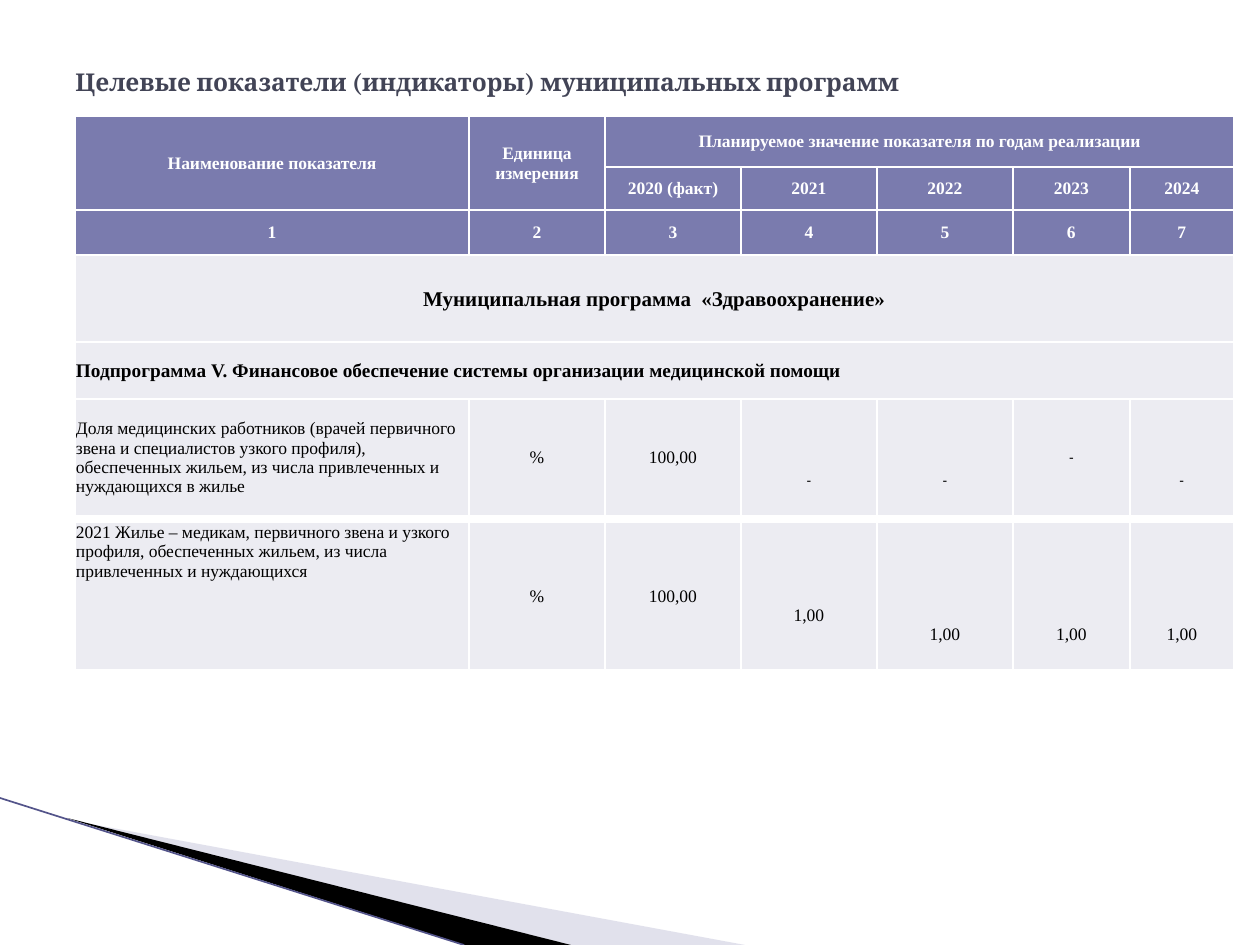
import pptx
import pptx.util
import pptx.dml.color
import pptx.enum.text
import pptx.oxml
import pptx.oxml.ns
import lxml.etree

PX = 914400 / 126
COLS = [394, 136, 136, 136, 136, 117, 104]
HEAD, BODY = "7A7BAE", "ECECF2"
SERIF = "Times New Roman"
MID = pptx.enum.text.MSO_ANCHOR.MIDDLE
TOP = pptx.enum.text.MSO_ANCHOR.TOP
MAIN = [
    [("Наименование показателя", 1, 2), ("Единица измерения", 1, 2),
     ("Планируемое значение показателя по годам реализации", 5, 1)],
    [None, None, "2020 (факт)", "2021", "2022", "2023", "2024"],
    list("1234567"),
    [("Муниципальная программа  «Здравоохранение»", 7, 1)],
    [("Подпрограмма V. Финансовое обеспечение системы организации "
      "медицинской помощи", 7, 1)],
    ["Доля медицинских работников (врачей первичного звена и специалистов "
     "узкого профиля), обеспеченных жильем, из числа привлеченных и "
     "нуждающихся в жилье", "%", "100,00", "-", "-", "-", "-"],
]
LAST = [["2021 Жилье – медикам, первичного звена и узкого профиля, "
         "обеспеченных жильем, из числа привлеченных и нуждающихся",
         "%", "100,00", "1,00", "1,00", "1,00", "1,00"]]


def emu(px):
    """Turn px into EMU."""
    return pptx.util.Emu(round(px * PX))


def paint(color, code):
    """Set a colour from a hex string."""
    color.rgb = pptx.dml.color.RGBColor.from_string(code)


def fill(part, code):
    """Give a cell or shape a solid fill."""
    part.fill.solid()
    paint(part.fill.fore_color, code)


def write(frame, text, size, code, font=SERIF, bold=False, mid=True):
    """Add one run to the first paragraph of a frame."""
    para = frame.paragraphs[0]
    kinds = pptx.enum.text.PP_ALIGN
    para.alignment = kinds.CENTER if mid else kinds.LEFT
    run = para.add_run()
    run.text = text
    run.font.name = font
    run.font.size = pptx.util.Pt(size)
    run.font.bold = bold
    paint(run.font.color, code)


def edge(cell):
    """Draw white one-point borders round a cell."""
    props = cell._tc.get_or_add_tcPr()
    for side in "LRTB":
        props.append(pptx.oxml.parse_xml(
            f'<a:ln{side} {pptx.oxml.ns.nsdecls("a")} w="12700"><a:solidFill>'
            f'<a:srgbClr val="FFFFFF"/></a:solidFill></a:ln{side}>'))


def grid(slide, left, top, rows, data, style):
    """Build a table whose cells follow the style rule."""
    table = slide.shapes.add_table(
        len(rows), len(COLS), emu(left), emu(top),
        emu(sum(COLS)), emu(sum(rows))).table
    for col, width in zip(table.columns, COLS):
        col.width = emu(width)
    for r, high in enumerate(rows):
        table.rows[r].height = emu(high)
        for c in range(len(COLS)):
            cell = table.cell(r, c)
            edge(cell)
            fill(cell, style(r, c)["back"])
    for r, line in enumerate(data):
        for c, item in enumerate(line):
            if item is None:
                continue
            text, wide, tall = item if isinstance(item, tuple) else (item, 1, 1)
            cell, look = table.cell(r, c), style(r, c)
            if wide * tall > 1:
                cell.merge(table.cell(r + tall - 1, c + wide - 1))
            cell.margin_left = cell.margin_right = emu(1)
            cell.margin_top = emu(look.get("drop", 1))
            cell.margin_bottom = 0
            cell.vertical_anchor = look.get("anchor", MID)
            write(cell.text_frame, text, look.get("size", 10),
                  look.get("ink", "000000"), look.get("font", SERIF),
                  look.get("bold", False), look.get("mid", True))


def upper(r, c):
    """Return the look of a cell in the main table."""
    if r < 3:
        return dict(back=HEAD, ink="FFFFFF", bold=True)
    if r < 5:
        return dict(back=BODY, bold=True, size=15 - r, mid=r == 3)
    look = dict(back=BODY, mid=c > 0)
    if c > 2:
        look.update(size=8, font="Arial", drop=1 if c == 5 else 47)
    return look


def lower(r, c):
    """Return the look of a cell in the last table."""
    return dict(back=BODY, mid=c > 0, anchor=MID if c else TOP,
                drop={0: 1, 1: 1, 2: 1, 3: 39}.get(c, 78))


def wedge(slide, left, top, points, code, alpha=100):
    """Draw a filled outline from points relative to a corner."""
    start, *rest = [(left + x, top + y) for x, y in points]
    pen = slide.shapes.build_freeform(*start, scale=PX)
    pen.add_line_segments(rest)
    shape = pen.convert_to_shape()
    shape.shadow.inherit = False
    shape.line.fill.background()
    fill(shape, code)
    if alpha < 100:
        tone = shape.fill._xPr.find(".//" + pptx.oxml.ns.qn("a:srgbClr"))
        lxml.etree.SubElement(
            tone, pptx.oxml.ns.qn("a:alpha"), val=str(alpha * 1000))


def corner(slide, left, top):
    """Draw the wedges and the line at the lower left."""
    wedge(slide, left, top, [(69, 22), (745, 147), (571, 147)], "B6B6D1", 40)
    wedge(slide, left, top, [(67, 20), (571, 147), (465, 147)], "000000")
    line = slide.shapes.add_connector(
        pptx.enum.shapes.MSO_CONNECTOR.STRAIGHT,
        emu(left), emu(top), emu(left + 464), emu(top + 147))
    line.line.width = pptx.util.Pt(0.95)
    paint(line.line.color, "53548A")
    lxml.etree.SubElement(
        line._element.spPr, pptx.oxml.ns.qn("a:effectLst"))


def title(slide, left, top, width, height):
    """Place the heading."""
    frame = slide.shapes.add_textbox(
        emu(left), emu(top), emu(width), emu(height)).text_frame
    frame.word_wrap = True
    frame.vertical_anchor = MID
    write(frame, "Целевые показатели (индикаторы) муниципальных программ",
          14, "424456", "Cambria", True, False)


def main():
    """Build the slide and save it."""
    deck = pptx.Presentation()
    deck.slide_width, deck.slide_height = emu(1260), emu(945)
    slide = deck.slides.add_slide(deck.slide_layouts[6])
    corner(slide, 0, 798)
    title(slide, 63, 38, 1134, 87)
    grid(slide, 75, 116, [51, 40, 45, 87, 57, 117], MAIN, upper)
    grid(slide, 75, 522, [148], LAST, lower)
    deck.save("out.pptx")


if __name__ == "__main__":
    main()
